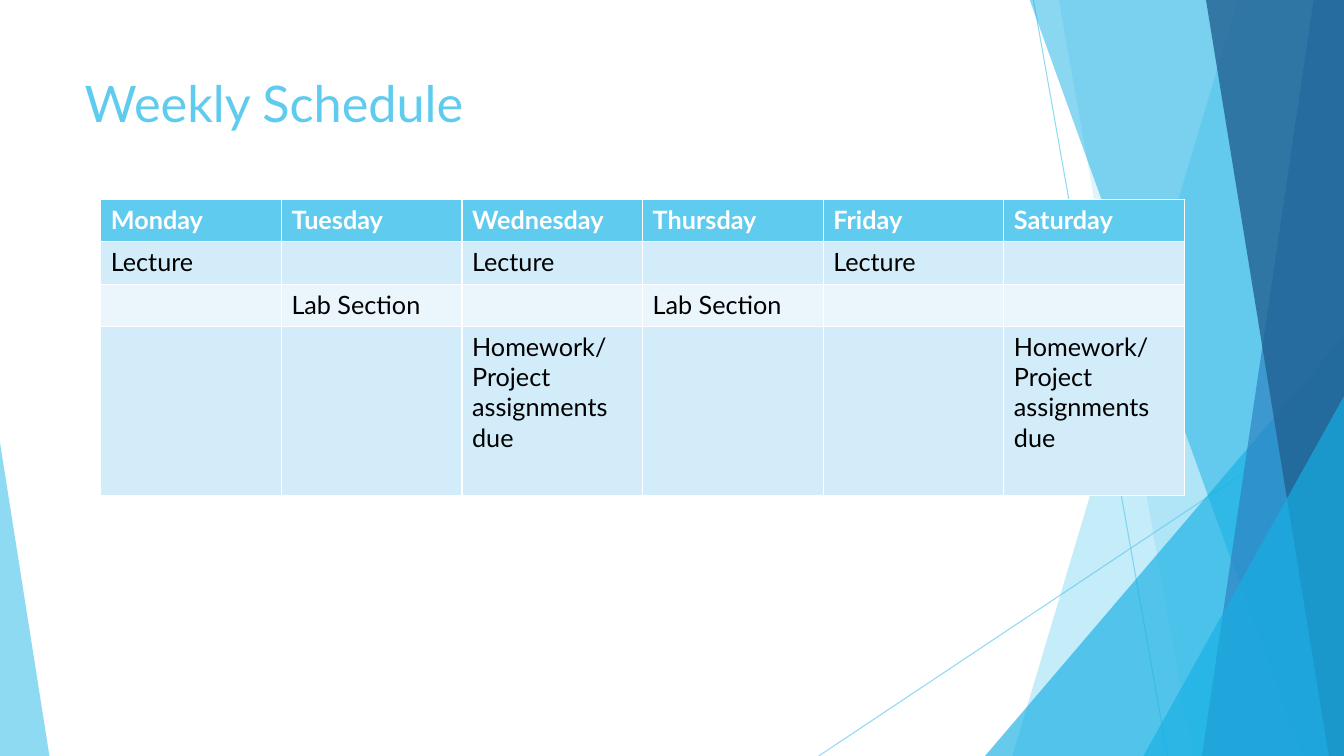
"""Build the weekly schedule slide with its faceted border and timetable."""
from lxml.etree import SubElement
from pptx import Presentation
from pptx.dml.color import RGBColor
from pptx.enum.shapes import MSO_CONNECTOR, MSO_SHAPE
from pptx.enum.text import MSO_ANCHOR, PP_ALIGN
from pptx.oxml.ns import qn
from pptx.util import Inches, Pt

WIDTH, HEIGHT, BAND_TOP = 13.33, 7.5, -0.01
FONT = "Lato"
COLORS = {
    "sky": "5FCBEF", "cyan": "17B0E4", "blue": "2E83C3", "navy": "226292",
    "band": "D2ECF9", "pale": "EAF6FC", "white": "FFFFFF", "black": "000000",
}
TITLE = "Weekly Schedule"
DUE = "Homework/ Project assignments due"
SCHEDULE = [
    ["Monday", "Tuesday", "Wednesday", "Thursday", "Friday", "Saturday"],
    ["Lecture", "", "Lecture", "", "Lecture", ""],
    ["", "Lab Section", "", "Lab Section", "", ""],
    ["", "", DUE, "", "", DUE],
]
ROW_FILLS = ["sky", "band", "pale", "band"]
ROW_HEIGHTS = [0.42, 0.42, 0.42, 1.68]
TABLE_LEFT, TABLE_TOP, TABLE_WIDTH = 1, 1.98, 10.75

LINES = [((10.25, 0), (11.58, HEIGHT)), ((WIDTH, 4.03), (8.12, HEIGHT))]
FACETS = [
    ("band", (12.28, 10.04), "sky", 36),
    ("band", (10.5, 11.83), "sky", 20),
    ("triangle", (9.77, 3.33, 3.56, 1), "cyan", 66),
    ("band", (10.21, 12.91), "cyan", 50),
    ("band", (13.03, 11.92), "blue", 70),
    ("band", (11.96, 13.18), "navy", 80),
    ("triangle", (11.34, 3.93, 1.99, 1), "cyan", 66),
    ("triangle", (0, 4.39, 0.49, 0), "sky", 70),
]


def rgb(name):
    """Return the named palette colour."""
    return RGBColor.from_string(COLORS[name])


def set_opacity(shape, percent):
    """Make the shape's solid colour partly transparent."""
    color = next(shape._element.spPr.iter(qn("a:srgbClr")))
    SubElement(color, qn("a:alpha"), val=str(percent * 1000))


def write(frame, text, size, color, bold=False, align=PP_ALIGN.LEFT):
    """Put one formatted paragraph in a text frame."""
    para = frame.paragraphs[0]
    para.alignment = align
    span = para.add_run()
    span.text = text
    span.font.name = FONT
    span.font.size = Pt(size)
    span.font.bold = bold
    span.font.color.rgb = rgb(color)


def add_line(page, start, end):
    """Draw one thin decorative line."""
    ends = [Inches(value) for value in start + end]
    line = page.shapes.add_connector(MSO_CONNECTOR.STRAIGHT, *ends)
    line.line.color.rgb = rgb("sky")
    line.line.width = Pt(0.75)
    set_opacity(line, 70)
    SubElement(line._element.spPr, qn("a:effectLst"))


def add_band(page, top_left, bottom_left):
    """Draw a full-height facet that reaches the right edge."""
    corners = [(top_left, BAND_TOP), (WIDTH, BAND_TOP), (WIDTH, HEIGHT), (bottom_left, HEIGHT)]
    points = [(Inches(x), Inches(y)) for x, y in corners]
    builder = page.shapes.build_freeform(*points[0])
    builder.add_line_segments(points[1:], close=True)
    return builder.convert_to_shape()


def add_triangle(page, left, top, width, apex):
    """Draw a triangle that stands on the bottom edge."""
    bounds = [Inches(value) for value in (left, top, width, HEIGHT - top)]
    triangle = page.shapes.add_shape(MSO_SHAPE.ISOSCELES_TRIANGLE, *bounds)
    triangle.adjustments[0] = apex
    return triangle


def add_facet(page, kind, geometry, color, opacity):
    """Draw one translucent facet."""
    draw = add_band if kind == "band" else add_triangle
    facet = draw(page, *geometry)
    facet.shadow.inherit = False
    facet.line.fill.background()
    facet.fill.solid()
    facet.fill.fore_color.rgb = rgb(color)
    set_opacity(facet, opacity)


def add_title(page):
    """Place and format the slide title."""
    title = page.shapes.title
    title.left, title.top = Inches(0.74), Inches(0.67)
    title.width, title.height = Inches(9.4), Inches(1.44)
    title.text_frame.vertical_anchor = MSO_ANCHOR.TOP
    write(title.text_frame, TITLE, 36, "sky")


def add_schedule(page):
    """Draw the timetable."""
    table = page.shapes.add_table(
        len(SCHEDULE), len(SCHEDULE[0]), Inches(TABLE_LEFT), Inches(TABLE_TOP),
        Inches(TABLE_WIDTH), Inches(sum(ROW_HEIGHTS))).table
    for row, entries in enumerate(SCHEDULE):
        table.rows[row].height = Inches(ROW_HEIGHTS[row])
        header = row == 0
        for column, text in enumerate(entries):
            cell = table.cell(row, column)
            cell.fill.solid()
            cell.fill.fore_color.rgb = rgb(ROW_FILLS[row])
            if text:
                write(cell.text_frame, text, 18, "white" if header else "black", bold=header)


def main():
    """Build and save the deck."""
    deck = Presentation()
    deck.slide_width, deck.slide_height = Inches(WIDTH), Inches(HEIGHT)
    page = deck.slides.add_slide(deck.slide_layouts[5])
    for start, end in LINES:
        add_line(page, start, end)
    for facet in FACETS:
        add_facet(page, *facet)
    add_title(page)
    add_schedule(page)
    deck.save("out.pptx")


if __name__ == "__main__":
    main()
